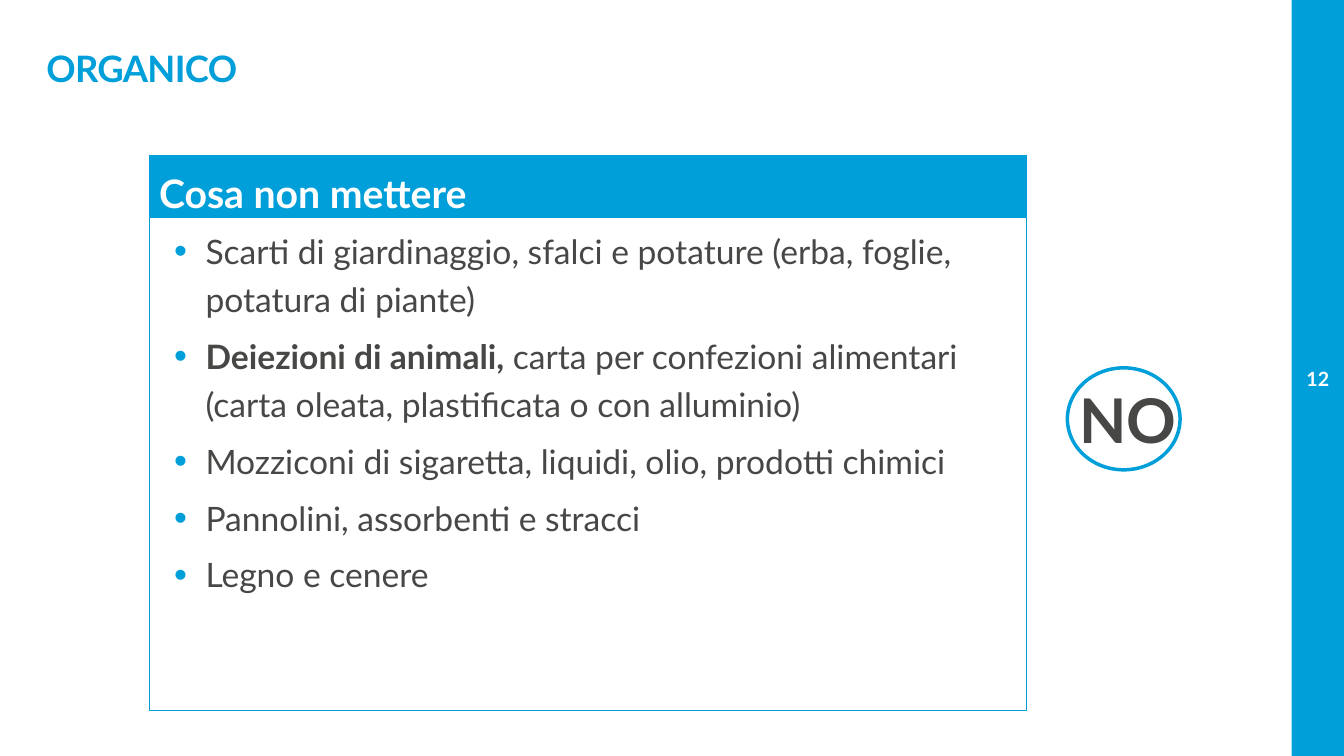
"""Build the slide listing what must not go into the organic waste bin."""
from dataclasses import dataclass
from typing import Optional

from lxml.etree import SubElement
from pptx import Presentation
from pptx.dml.color import RGBColor
from pptx.enum.shapes import MSO_SHAPE as Preset
from pptx.enum.text import MSO_ANCHOR as Anchor, MSO_AUTO_SIZE as AutoSize, PP_ALIGN as Align
from pptx.oxml.ns import qn
from pptx.util import Cm, Pt

BLUE = RGBColor(0x00, 0x9F, 0xDA)
GREY = RGBColor(0x47, 0x47, 0x46)
WHITE = RGBColor(0xFF, 0xFF, 0xFF)

Runs = list[tuple[str, bool]]


@dataclass(frozen=True)
class Box:
    left: float
    top: float
    width: float
    height: float
    preset: Preset = Preset.RECTANGLE
    fill: Optional[RGBColor] = None
    line_width: float = 0


@dataclass(frozen=True)
class Style:
    size: float
    color: RGBColor
    frame: dict
    paragraph: dict
    spacing: float = 0
    bulleted: bool = False


def insets(left: float, top: float, right: float, bottom: float) -> dict:
    return {"margin_left": Cm(left), "margin_top": Cm(top),
            "margin_right": Cm(right), "margin_bottom": Cm(bottom)}


def apply(target, values: dict) -> None:
    for name, value in values.items():
        setattr(target, name, value)


def add_bullet(paragraph) -> None:
    properties = paragraph._p.get_or_add_pPr()
    apply_indent = {"marL": Cm(1.17), "indent": Cm(-0.79)}
    for name, length in apply_indent.items():
        properties.set(name, str(int(length)))
    color = SubElement(properties, qn("a:buClr"))
    SubElement(color, qn("a:srgbClr"), val=str(BLUE))
    SubElement(properties, qn("a:buSzPct"), val="110000")
    SubElement(properties, qn("a:buFont"), typeface="Arial")
    SubElement(properties, qn("a:buChar"), char="•")


def write(frame, paragraphs: list[Runs], style: Style) -> None:
    apply(frame, {"word_wrap": True, "vertical_anchor": Anchor.TOP} | style.frame)
    for index, runs in enumerate(paragraphs):
        paragraph = frame.add_paragraph() if index else frame.paragraphs[0]
        apply(paragraph, {"alignment": Align.LEFT} | style.paragraph)
        if style.bulleted:
            add_bullet(paragraph)
        for text, bold in runs:
            run = paragraph.add_run()
            run.text = text
            apply(run.font, {"name": "Lato", "size": Pt(style.size), "bold": bold})
            run.font.color.rgb = style.color
            if style.spacing:
                run._r.get_or_add_rPr().set("spc", str(int(style.spacing * 100)))


def draw(shapes, box: Box):
    place = [Cm(length) for length in (box.left, box.top, box.width, box.height)]
    shape = shapes.add_shape(box.preset, *place)
    shape.shadow.inherit = False
    if box.fill is None:
        shape.fill.background()
    else:
        shape.fill.solid()
        shape.fill.fore_color.rgb = box.fill
    if box.line_width:
        shape.line.color.rgb = BLUE
        shape.line.width = Pt(box.line_width)
    else:
        shape.line.fill.background()
    return shape


def add_text(shapes, box: Box, text: str, style: Style) -> None:
    place = [Cm(length) for length in (box.left, box.top, box.width, box.height)]
    write(shapes.add_textbox(*place).text_frame, [[(text, True)]], style)


SIDE_BAR = Box(32.55, 0, 1.32, 19.05, fill=BLUE)
TITLE = Box(1.17, 1.14, 30.81, 1.27)
PAGE_NUMBER = Box(32.55, 9.02, 1.32, 1.02)
HEADING = Box(3.76, 3.91, 22.12, 1.57, fill=BLUE, line_width=0.75)
LIST_PANEL = Box(3.76, 5.48, 22.12, 12.42, line_width=0.75)
NO_LABEL = Box(26.9, 9.53, 4.62, 2.29, fill=WHITE)
NO_RING = Box(26.9, 9.27, 2.84, 2.57, preset=Preset.OVAL, line_width=2.5)

LOOSE = {"line_spacing": 1.2, "space_after": Pt(6)}
TIGHT = {"line_spacing": 0.9}
GROWING = {"auto_size": AutoSize.SHAPE_TO_FIT_TEXT}

TITLE_STYLE = Style(26, BLUE, insets(0, 0.13, 0.25, 0.13) | GROWING
                    | {"vertical_anchor": Anchor.BOTTOM}, TIGHT, spacing=-0.5)
NUMBER_STYLE = Style(14, WHITE, insets(0, 0, 0, 0)
                     | {"vertical_anchor": Anchor.MIDDLE, "word_wrap": False},
                     {"alignment": Align.CENTER})
HEADING_STYLE = Style(28, WHITE, {}, LOOSE)
LIST_STYLE = Style(24, GREY, {}, LOOSE, bulleted=True)
NO_STYLE = Style(44, GREY, insets(0.3, 0.3, 0.3, 0.3) | GROWING, TIGHT)

FORBIDDEN_ITEMS: list[Runs] = [
    [("Scarti di giardinaggio, sfalci e potature (erba, foglie, potatura di piante)", False)],
    [("Deiezioni di animali,", True),
     (" carta per confezioni alimentari (carta oleata, plastificata o con alluminio)", False)],
    [("Mozziconi di sigaretta, liquidi, olio, prodotti chimici", False)],
    [("Pannolini, assorbenti e stracci", False)],
    [("Legno e cenere", False)],
]


def main() -> None:
    deck = Presentation()
    apply(deck, {"slide_width": Cm(33.87), "slide_height": Cm(19.05)})
    shapes = deck.slides.add_slide(deck.slide_layouts[6]).shapes
    draw(shapes, SIDE_BAR)
    add_text(shapes, TITLE, "ORGANICO", TITLE_STYLE)
    add_text(shapes, PAGE_NUMBER, "12", NUMBER_STYLE)
    write(draw(shapes, HEADING).text_frame, [[("Cosa non mettere", True)]], HEADING_STYLE)
    write(draw(shapes, LIST_PANEL).text_frame, FORBIDDEN_ITEMS, LIST_STYLE)
    write(draw(shapes, NO_LABEL).text_frame, [[("NO", True)]], NO_STYLE)
    draw(shapes, NO_RING)
    deck.save("out.pptx")


if __name__ == "__main__":
    main()
